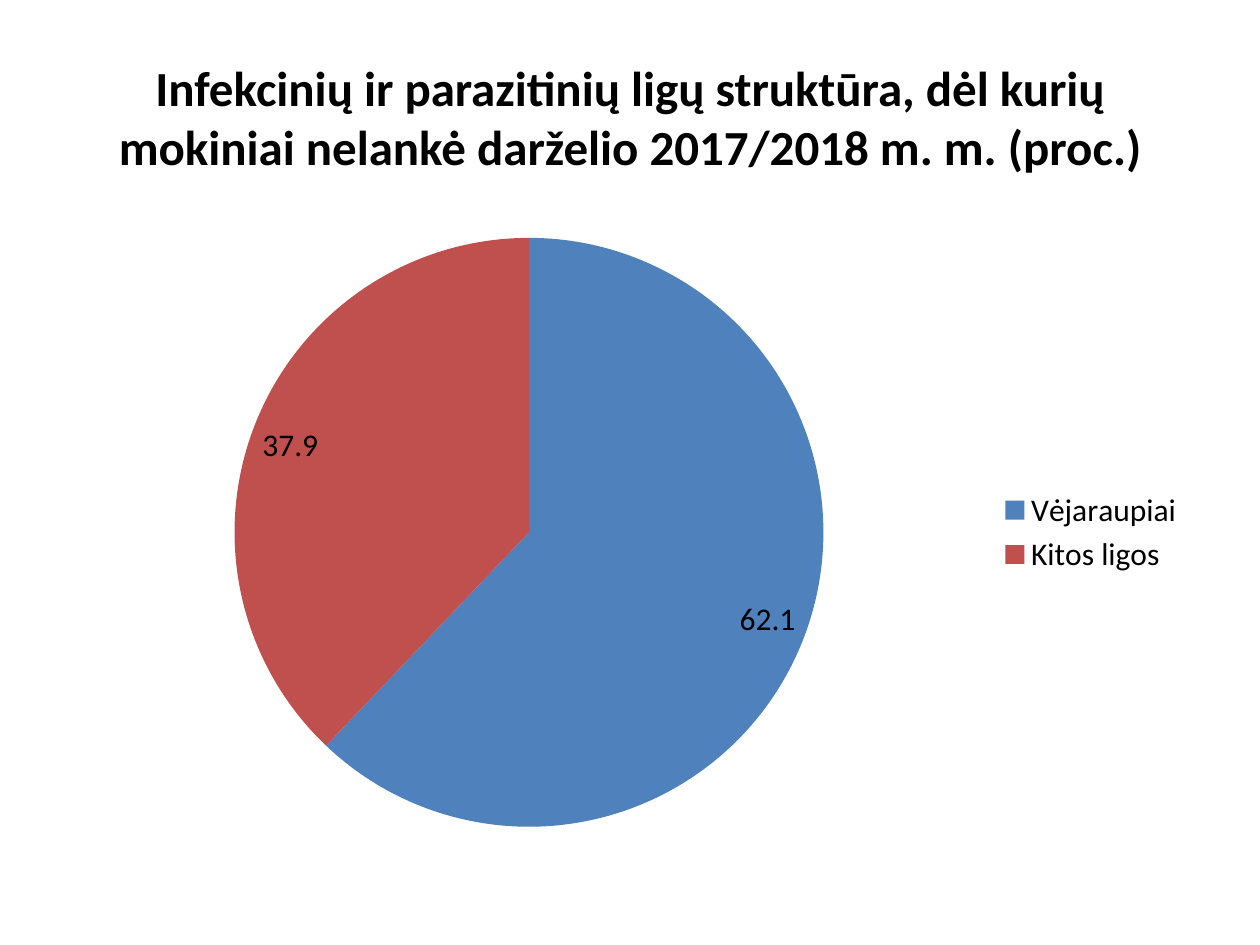
from pptx import Presentation
from pptx import util as u
from pptx.chart.data import CategoryChartData
from pptx.dml.color import RGBColor
from pptx.enum import chart as ch, text as tx

WIDE, HIGH = u.Inches(10), u.Inches(7.5)
SHARES = {"Vėjaraupiai": (62.1, "4F81BD"), "Kitos ligos": (37.9, "C0504D")}


def paint(color, code):
    color.rgb = RGBColor.from_string(code)


def style(font, size, bold=False, code="000000"):
    font.name, font.size, font.bold = "Calibri", u.Pt(size), bold
    paint(font.color, code)


def write(shape, words, align=tx.PP_ALIGN.CENTER, **form):
    frame = shape.text_frame
    frame.word_wrap = True
    frame.auto_size = tx.MSO_AUTO_SIZE.NONE
    frame.vertical_anchor = tx.MSO_ANCHOR.MIDDLE
    para = frame.paragraphs[0]
    para.alignment = align
    run = para.add_run()
    run.text = words
    style(run.font, **form)


def share(x, y, w, h):
    """Turn shares of the slide into a box in slide units."""
    return int(x * WIDE), int(y * HIGH), int(w * WIDE), int(h * HIGH)


def add_title(slide, box, words):
    title = slide.shapes.title
    title.left, title.top, title.width, title.height = box
    write(title, words, size=28, bold=True)


def add_pie(slide, box, shares):
    data = CategoryChartData(number_format="0.0")
    data.categories = list(shares)
    data.add_series("Series 1", [value for value, _ in shares.values()])
    chart = slide.shapes.add_chart(ch.XL_CHART_TYPE.PIE, *box, data).chart
    style(chart.font, 18)
    chart.has_title = False
    chart.has_legend = True
    chart.legend.position = ch.XL_LEGEND_POSITION.RIGHT
    chart.legend.include_in_layout = False

    plot = chart.plots[0]
    plot.vary_by_categories = True
    for i, (_, code) in enumerate(shares.values()):
        fill = plot.series[0].points[i].format.fill
        fill.solid()
        paint(fill.fore_color, code)

    plot.has_data_labels = True
    labels = plot.data_labels
    labels.show_value = True
    labels.show_percentage = False
    labels.position = ch.XL_LABEL_POSITION.INSIDE_END
    style(labels.font, 18)


def main():
    deck = Presentation()
    deck.slide_width, deck.slide_height = WIDE, HIGH
    slide = deck.slides.add_slide(deck.slide_layouts[5])
    add_title(slide, share(0.05, 0.04, 0.9, 1 / 6),
              "Infekcinių ir parazitinių ligų struktūra, dėl kurių "
              "mokiniai nelankė darželio 2017/2018 m. m. (proc.)")
    add_pie(slide, share(0.05, 7 / 30, 0.9, 0.66), SHARES)
    deck.save("out.pptx")


if __name__ == "__main__":
    main()
